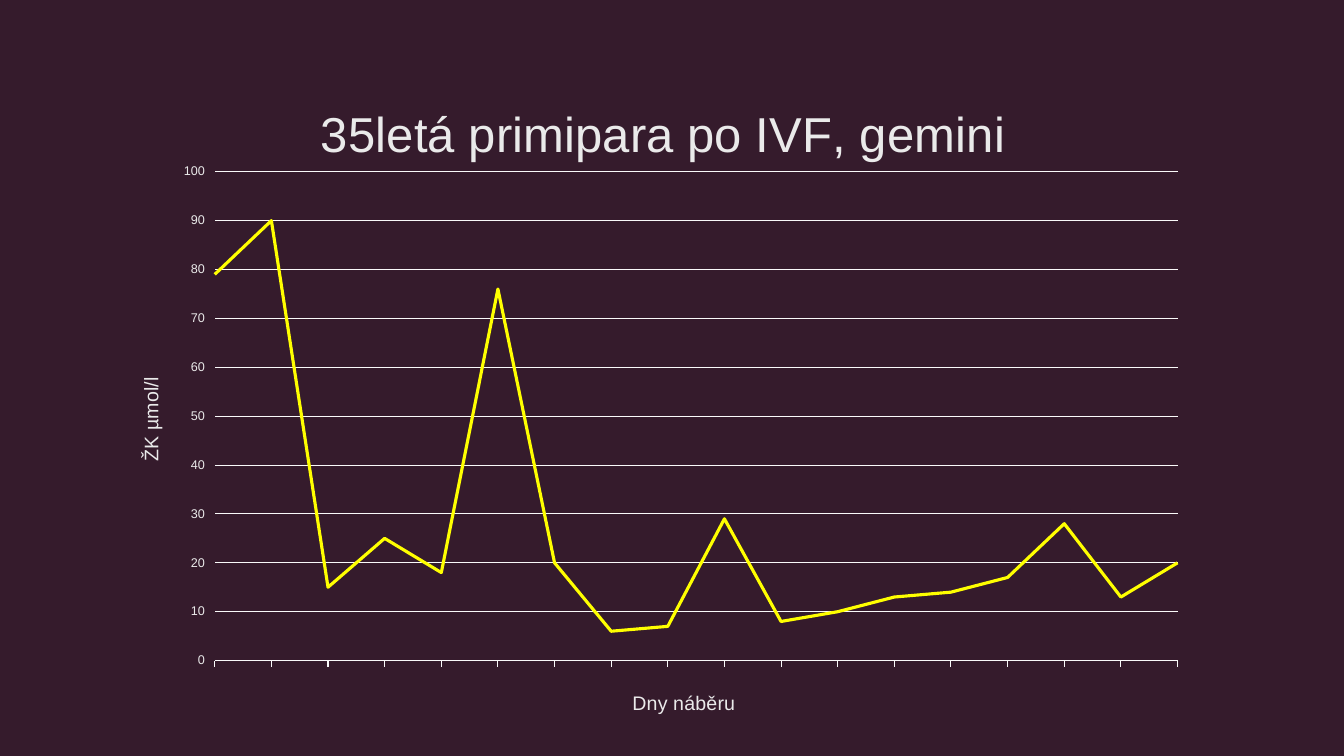
from dataclasses import dataclass
from typing import Any

from lxml.etree import SubElement
from pptx import Presentation
from pptx.chart.data import CategoryChartData
from pptx.dml.color import RGBColor
from pptx.enum.chart import XL_CHART_TYPE, XL_MARKER_STYLE, XL_TICK_LABEL_POSITION, XL_TICK_MARK
from pptx.oxml import parse_xml
from pptx.oxml.ns import nsdecls, qn
from pptx.util import Cm, Pt


@dataclass(frozen=True)
class Theme:
    background: RGBColor = RGBColor(0x35, 0x1B, 0x2C)
    text: RGBColor = RGBColor(0xEA, 0xEA, 0xEA)
    rule: RGBColor = RGBColor(0xFA, 0xFA, 0xFA)
    curve: RGBColor = RGBColor(0xFF, 0xFF, 0x00)
    font: str = "Arial"
    heading_size: float = 35
    axis_title_size: float = 14
    label_size: float = 9
    rule_width: float = 0.75
    curve_width: float = 2.25


@dataclass(frozen=True)
class TitleSpec:
    """A chart or axis title; left and top are percentages of the chart."""
    text: str
    size: float
    left: float
    top: float


THEME = Theme()
HEADING = TitleSpec("35letá primipara po IVF, gemini", THEME.heading_size, 18.5, 3.8)
DAYS_TITLE = TitleSpec("Dny náběru", THEME.axis_title_size, 47.6, 93.3)
ACID_TITLE = TitleSpec("ŽK µmol/l", THEME.axis_title_size, 2.2, 46.1)
ACID_LEVELS = (79, 90, 15, 25, 18, 76, 20, 6, 7, 29, 8, 10, 13, 14, 17, 28, 13, 20)


def set_layout(parent: Any, position: int, **percentages: float) -> None:
    """Place a chart part by percentages of the chart area."""
    for old in parent.findall(qn("c:layout")):
        parent.remove(old)
    layout = parse_xml(f"<c:layout {nsdecls('c')}/>")
    manual = SubElement(layout, qn("c:manualLayout"))
    if "w" in percentages:
        SubElement(manual, qn("c:layoutTarget")).set("val", "inner")
    for name in ("x", "y"):
        SubElement(manual, qn(f"c:{name}Mode")).set("val", "edge")
    for name, value in percentages.items():
        SubElement(manual, qn(f"c:{name}")).set("val", str(value / 100))
    parent.insert(position, layout)


def style_font(font: Any, size: float) -> None:
    font.name = THEME.font
    font.size = Pt(size)
    font.bold = False
    font.color.rgb = THEME.text


def style_line(line: Any, color: RGBColor, width: float) -> None:
    line.color.rgb = color
    line.width = Pt(width)


def write_title(title: Any, spec: TitleSpec) -> None:
    title.text_frame.text = spec.text
    style_font(title.text_frame.paragraphs[0].runs[0].font, spec.size)
    set_layout(title.element, 1, x=spec.left, y=spec.top)


def start_curve_on_axis(plot_area: Any) -> None:
    """Put the first and last points on the edges of the plot."""
    level_axis = plot_area.find(qn("c:valAx"))
    for old in level_axis.findall(qn("c:crossBetween")):
        level_axis.remove(old)
    crossing = level_axis.xpath("c:crossAx | c:crosses")[-1]
    crossing.addnext(parse_xml(f'<c:crossBetween {nsdecls("c")} val="midCat"/>'))


def add_acid_chart(page: Any) -> None:
    data = CategoryChartData()
    data.categories = [str(day) for day in range(1, len(ACID_LEVELS) + 1)]
    data.add_series("Series 1", ACID_LEVELS)
    chart = page.shapes.add_chart(
        XL_CHART_TYPE.LINE, Cm(2.79), Cm(1.7), Cm(27.43), Cm(16.74), data
    ).chart
    style_font(chart.font, THEME.label_size)
    chart.has_legend = False
    write_title(chart.chart_title, HEADING)
    plot_area = chart.element.find(".//" + qn("c:plotArea"))
    set_layout(plot_area, 0, x=9.56, y=15.7, w=88.46, h=73.6)
    start_curve_on_axis(plot_area)

    # Day axis: ticks without labels
    days = chart.category_axis
    write_title(days.axis_title, DAYS_TITLE)
    days.has_major_gridlines = False
    days.major_tick_mark = XL_TICK_MARK.OUTSIDE
    days.tick_label_position = XL_TICK_LABEL_POSITION.NONE
    style_line(days.format.line, THEME.rule, THEME.rule_width)

    # Level axis: grid lines without an axis line
    levels = chart.value_axis
    write_title(levels.axis_title, ACID_TITLE)
    levels.axis_title.element.find(".//" + qn("a:bodyPr")).set("rot", "-5400000")
    levels.minimum_scale, levels.maximum_scale, levels.major_unit = 0, 100, 10
    levels.major_tick_mark = XL_TICK_MARK.OUTSIDE
    levels.format.line.fill.background()
    style_font(levels.tick_labels.font, THEME.label_size)
    style_line(levels.major_gridlines.format.line, THEME.rule, THEME.rule_width)

    # Curve
    chart.plots[0].vary_by_categories = False
    curve = chart.plots[0].series[0]
    curve.smooth = False
    curve.marker.style = XL_MARKER_STYLE.NONE
    style_line(curve.format.line, THEME.curve, THEME.curve_width)


def main() -> None:
    deck = Presentation()
    deck.slide_width, deck.slide_height = Cm(33.87), Cm(19.05)
    page = deck.slides.add_slide(deck.slide_layouts[6])
    page.background.fill.solid()
    page.background.fill.fore_color.rgb = THEME.background
    add_acid_chart(page)
    deck.save("out.pptx")


if __name__ == "__main__":
    main()
